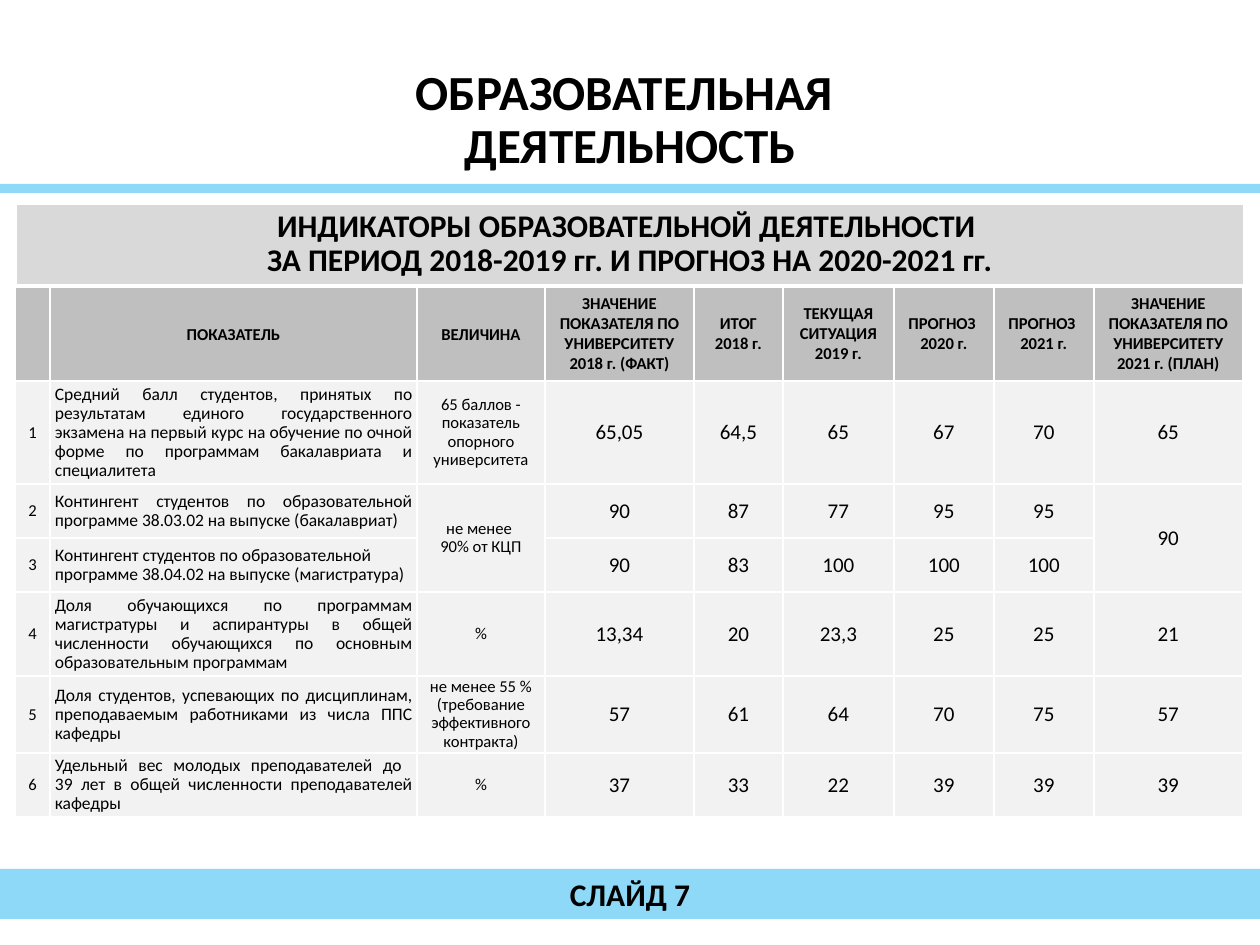
from dataclasses import dataclass
from typing import NamedTuple

from lxml.etree import SubElement
from pptx import Presentation
from pptx.dml.color import RGBColor
from pptx.enum.shapes import MSO_SHAPE
from pptx.enum.text import MSO_ANCHOR, MSO_AUTO_SIZE, PP_ALIGN
from pptx.oxml.ns import qn
from pptx.util import Emu, Pt

BLACK = RGBColor(0x00, 0x00, 0x00)
WHITE = RGBColor(0xFF, 0xFF, 0xFF)
SKY = RGBColor(0x8E, 0xD9, 0xF8)
SILVER = RGBColor(0xD9, 0xD9, 0xD9)
HEADER_GREY = RGBColor(0xBF, 0xBF, 0xBF)
BODY_GREY = RGBColor(0xF2, 0xF2, 0xF2)

EMU_PER_PX = 914400 / 126
FONT = "Calibri"


class Box(NamedTuple):
    left: int
    top: int
    width: int
    height: int


class Margins(NamedTuple):
    left: int
    top: int
    right: int
    bottom: int


@dataclass(frozen=True)
class TextStyle:
    size: float
    bold: bool = False
    align: PP_ALIGN = PP_ALIGN.CENTER
    spacing: float = 0.9


@dataclass(frozen=True)
class CellStyle:
    text: TextStyle
    margins: Margins
    fill: RGBColor = BODY_GREY


@dataclass(frozen=True)
class Indicator:
    name: str
    target: str
    values: tuple[str, ...]
    align: PP_ALIGN = PP_ALIGN.JUSTIFY


TIGHT = Margins(1, 1, 1, 0)
TITLE_STYLE = TextStyle(28, bold=True)
BANNER_STYLE = TextStyle(18, bold=True)
FOOTER_STYLE = TextStyle(18, bold=True, spacing=1)
HEADER_TEXT = TextStyle(9.5, bold=True, spacing=1)
HEADER_TIGHT = CellStyle(HEADER_TEXT, TIGHT, HEADER_GREY)
HEADER_ROOMY = CellStyle(HEADER_TEXT, Margins(13, 6, 13, 6), HEADER_GREY)
NUMBER_CELL = CellStyle(TextStyle(9.5), TIGHT)
TARGET_CELL = CellStyle(TextStyle(9.5), Margins(2, 2, 2, 2))
VALUE_CELL = CellStyle(TextStyle(12), TIGHT)
NAME_MARGINS = Margins(5, 2, 5, 2)

COLUMN_WIDTHS = (35, 367, 128, 149, 89, 111, 100, 100, 149)
ROW_HEIGHTS = (94, 103, 54, 54, 84, 77, 64)
TARGET_COLUMN, PLAN_COLUMN = 2, 8
SHARED_ROWS = (2, 3)

HEADERS = (
    "",
    "ПОКАЗАТЕЛЬ",
    "ВЕЛИЧИНА",
    "ЗНАЧЕНИЕ ПОКАЗАТЕЛЯ ПО УНИВЕРСИТЕТУ 2018 г. (ФАКТ)",
    "ИТОГ\n2018 г.",
    "ТЕКУЩАЯ СИТУАЦИЯ\n2019 г.",
    "ПРОГНОЗ \n2020 г.",
    "ПРОГНОЗ \n2021 г.",
    "ЗНАЧЕНИЕ ПОКАЗАТЕЛЯ ПО УНИВЕРСИТЕТУ 2021 г. (ПЛАН)",
)

INDICATORS = (
    Indicator(
        "Средний балл студентов, принятых по результатам единого государственного "
        "экзамена на первый курс на обучение по очной форме по программам "
        "бакалавриата и специалитета",
        "65 баллов - показатель опорного университета",
        ("65,05", "64,5", "65", "67", "70", "65"),
    ),
    Indicator(
        "Контингент студентов по образовательной программе 38.03.02 на выпуске (бакалавриат)",
        "не менее \v90% от КЦП",
        ("90", "87", "77", "95", "95", "90"),
    ),
    Indicator(
        "Контингент студентов по образовательной программе 38.04.02 на выпуске (магистратура)",
        "",
        ("90", "83", "100", "100", "100", ""),
        PP_ALIGN.LEFT,
    ),
    Indicator(
        "Доля обучающихся по программам магистратуры и аспирантуры в общей "
        "численности обучающихся по основным образовательным программам",
        "%",
        ("13,34", "20", "23,3", "25", "25", "21"),
    ),
    Indicator(
        "Доля студентов, успевающих по дисциплинам, преподаваемым работниками "
        "из числа ППС кафедры",
        "не менее 55 % (требование эффективного контракта)",
        ("57", "61", "64", "70", "75", "57"),
    ),
    Indicator(
        "Удельный вес молодых преподавателей до \v39 лет в общей численности "
        "преподавателей кафедры",
        "%",
        ("37", "33", "22", "39", "39", "39"),
    ),
)


def px(length: int) -> Emu:
    return Emu(round(length * EMU_PER_PX))


def place(box: Box) -> list[Emu]:
    return [px(length) for length in box]


def write(text_frame, text: str, style: TextStyle) -> None:
    text_frame.text = text
    for paragraph in text_frame.paragraphs:
        paragraph.alignment = style.align
        paragraph.line_spacing = style.spacing
        for run in paragraph.runs:
            run.font.name = FONT
            run.font.size = Pt(style.size)
            run.font.bold = style.bold
            run.font.color.rgb = BLACK


def write_block(shape, text: str, style: TextStyle) -> None:
    frame = shape.text_frame
    write(frame, text, style)
    frame.word_wrap = True
    frame.auto_size = MSO_AUTO_SIZE.NONE
    frame.vertical_anchor = MSO_ANCHOR.MIDDLE


def add_bar(slide, box: Box, color: RGBColor):
    bar = slide.shapes.add_shape(MSO_SHAPE.RECTANGLE, *place(box))
    bar.shadow.inherit = False
    bar.fill.solid()
    bar.fill.fore_color.rgb = color
    bar.line.fill.background()
    return bar


def add_borders(cell) -> None:
    properties = cell._tc.get_or_add_tcPr()
    for side in ("a:lnL", "a:lnR", "a:lnT", "a:lnB"):
        line = SubElement(properties, qn(side), w=str(Pt(1.5)))
        fill = SubElement(line, qn("a:solidFill"))
        SubElement(fill, qn("a:srgbClr"), val=str(WHITE))


def fill_cell(cell, text: str, style: CellStyle) -> None:
    add_borders(cell)
    cell.fill.solid()
    cell.fill.fore_color.rgb = style.fill
    cell.vertical_anchor = MSO_ANCHOR.MIDDLE
    cell.margin_left, cell.margin_top, cell.margin_right, cell.margin_bottom = map(
        px, style.margins
    )
    write(cell.text_frame, text, style.text)


def add_indicator_table(slide, left: int, top: int) -> None:
    box = Box(left, top, sum(COLUMN_WIDTHS), sum(ROW_HEIGHTS))
    table = slide.shapes.add_table(len(ROW_HEIGHTS), len(COLUMN_WIDTHS), *place(box)).table
    table.first_row = False
    table.horz_banding = False
    for column, width in zip(table.columns, COLUMN_WIDTHS):
        column.width = px(width)
    for row, height in zip(table.rows, ROW_HEIGHTS):
        row.height = px(height)
    for index, header in enumerate(HEADERS):
        style = HEADER_TIGHT if index <= TARGET_COLUMN else HEADER_ROOMY
        fill_cell(table.cell(0, index), header, style)
    for number, indicator in enumerate(INDICATORS, start=1):
        name_cell = CellStyle(TextStyle(10, align=indicator.align), NAME_MARGINS)
        fill_cell(table.cell(number, 0), str(number), NUMBER_CELL)
        fill_cell(table.cell(number, 1), indicator.name, name_cell)
        fill_cell(table.cell(number, TARGET_COLUMN), indicator.target, TARGET_CELL)
        for index, value in enumerate(indicator.values, start=TARGET_COLUMN + 1):
            fill_cell(table.cell(number, index), value, VALUE_CELL)
    first, last = SHARED_ROWS
    for index in (TARGET_COLUMN, PLAN_COLUMN):
        table.cell(first, index).merge(table.cell(last, index))


def main() -> None:
    presentation = Presentation()
    presentation.slide_width, presentation.slide_height = px(1260), px(945)
    slide = presentation.slides.add_slide(presentation.slide_layouts[5])

    add_bar(slide, Box(0, 184, 1260, 9), SKY)
    add_bar(slide, Box(0, 869, 1260, 50), SKY)
    footer = slide.shapes.add_textbox(*place(Box(0, 869, 1260, 50)))
    write_block(footer, "СЛАЙД 7", FOOTER_STYLE)

    title = slide.shapes.title
    title.left, title.top, title.width, title.height = place(Box(0, 68, 1260, 107))
    write_block(title, "ОБРАЗОВАТЕЛЬНАЯ \nДЕЯТЕЛЬНОСТЬ", TITLE_STYLE)

    banner = add_bar(slide, Box(17, 205, 1226, 79), SILVER)
    write_block(
        banner,
        "ИНДИКАТОРЫ ОБРАЗОВАТЕЛЬНОЙ ДЕЯТЕЛЬНОСТИ \v"
        "ЗА ПЕРИОД 2018-2019 гг. И ПРОГНОЗ НА 2020-2021 гг.",
        BANNER_STYLE,
    )
    add_indicator_table(slide, 15, 287)
    presentation.save("out.pptx")


if __name__ == "__main__":
    main()
